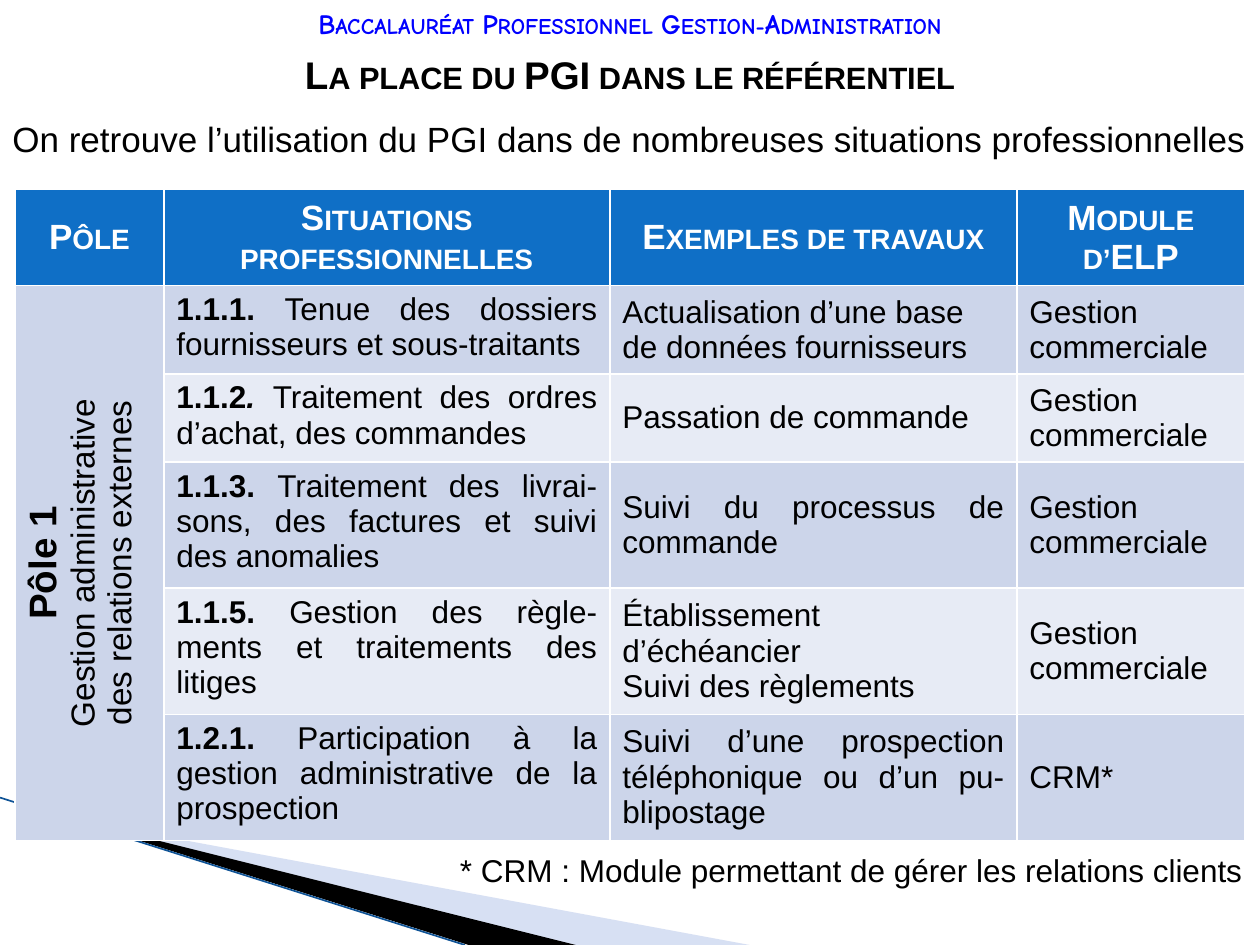
from lxml.etree import SubElement
from pptx import Presentation
from pptx.dml.color import RGBColor
from pptx.enum.shapes import MSO_CONNECTOR
from pptx.enum.text import MSO_ANCHOR, PP_ALIGN
from pptx.oxml.ns import qn
from pptx.util import Inches, Pt

LEFT, MID, RIGHT, JUST = PP_ALIGN.LEFT, PP_ALIGN.CENTER, PP_ALIGN.RIGHT, PP_ALIGN.JUSTIFY
WIDE, HIGH = 10, 7.5
BLUE, DARK, PALE = "0F6FC6", "CCD5EA", "E7EBF5"

BANDS = [
    ("9DB2E1", 40, [(0.55, 6.5), (5.95, 7.5), (4.56, 7.5)]),
    ("000000", 100, [(0.53, 6.49), (4.57, 7.5), (3.72, 7.5)]),
]
EDGE = (0, 6.33, 3.69, 7.5)

TEXTS = [
    ("Baccalauréat Professionnel Gestion-Administration",
     (0, 0, WIDE, 0.37), 16, "Comic Neue", "0000FF", True, MID, 1),
    ("La place du PGI dans le référentiel",
     (0, 0.36, WIDE, 0.47), 22, "Arial", "000000", True, MID, 1),
    ("On retrouve l’utilisation du PGI dans de nombreuses situations professionnelles",
     (0, 0.92, WIDE, 0.46), 20, "Arial", "000000", False, LEFT, 0.9),
    ("* CRM : Module permettant de gérer les relations clients",
     (1.1, 6.74, 8.86, 0.37), 18, "Arial", "000000", False, RIGHT, 0.9),
]

SPOT = (0.12, 1.5)
COLS = [1.18, 3.54, 3.23, 1.81]
ROWS = [0.76, 0.7, 0.7, 1, 1, 1]
HEADS = ["Pôle", "Situations professionnelles", "Exemples de travaux", "Module d’ELP"]
POLE = [("Pôle 1", 22, True), ("Gestion administrative", 19, False),
        ("des relations externes", 19, False)]
SALES = "Gestion commerciale"
TASKS = [
    ("1.1.1.", "Tenue des dossiers fournisseurs et sous-traitants",
     ["Actualisation d’une base de données fournisseurs"], LEFT, SALES),
    ("1.1.2.", "Traitement des ordres d’achat, des commandes",
     ["Passation de commande"], JUST, SALES),
    ("1.1.3.", "Traitement des livrai-sons, des factures et suivi des anomalies",
     ["Suivi du processus de commande"], JUST, SALES),
    ("1.1.5.", "Gestion des règle-ments et traitements des litiges",
     ["Établissement d’échéancier", "Suivi des règlements"], JUST, SALES),
    ("1.2.1.", "Participation à la gestion administrative de la prospection",
     ["Suivi d’une prospection téléphonique ou d’un pu-blipostage"], JUST, "CRM*"),
]


def paint(color, tint):
    color.rgb = RGBColor.from_string(tint)


def fill(item, tint):
    item.fill.solid()
    paint(item.fill.fore_color, tint)


def style(para, size, face="Arial", tint="000000", bold=False, align=LEFT, caps=False):
    para.alignment = align
    font = para.font
    font.size, font.name, font.bold = Pt(size), face, bold
    paint(font.color, tint)
    if caps:
        para._p.pPr.find(qn("a:defRPr")).set("cap", "small")


def lines(frame, count):
    for _ in range(count - 1):
        frame.add_paragraph()
    return frame.paragraphs


def put(para, text, bold=False, slant=False):
    run = para.add_run()
    run.text = text
    run.font.bold = bold
    if slant:
        run.font.italic = True


def draw_bands(slide):
    for tint, alpha, spots in BANDS:
        dots = [(round(x * 100), round(y * 100)) for x, y in spots]
        path = slide.shapes.build_freeform(*dots[0], scale=Inches(0.01))
        path.add_line_segments(dots[1:], close=True)
        band = path.convert_to_shape()
        band.shadow.inherit = False
        fill(band, tint)
        band.line.fill.background()
        if alpha < 100:
            color = band._element.spPr.find(".//" + qn("a:srgbClr"))
            SubElement(color, qn("a:alpha")).set("val", str(alpha * 1000))
    edge = slide.shapes.add_connector(MSO_CONNECTOR.STRAIGHT, *map(Inches, EDGE))
    edge.line.width = Pt(0.95)
    paint(edge.line.color, "0F5396")
    SubElement(edge._element.spPr, qn("a:effectLst"))


def draw_texts(slide):
    for text, area, size, face, tint, bold, align, gap in TEXTS:
        frame = slide.shapes.add_textbox(*map(Inches, area)).text_frame
        frame.word_wrap = True
        para = frame.paragraphs[0]
        para.text = text
        para.line_spacing = gap
        style(para, size, face, tint, bold, align, caps=bold)


def draw_table(slide):
    area = (*SPOT, sum(COLS), sum(ROWS))
    table = slide.shapes.add_table(len(ROWS), len(COLS), *map(Inches, area)).table
    for col, wide in zip(table.columns, COLS):
        col.width = Inches(wide)
    for row, high in zip(table.rows, ROWS):
        row.height = Inches(high)

    for col, text in enumerate(HEADS):
        cell = table.cell(0, col)
        fill(cell, BLUE)
        cell.vertical_anchor = MSO_ANCHOR.MIDDLE
        para = cell.text_frame.paragraphs[0]
        put(para, text, bold=True)
        style(para, 20, tint="FFFFFF", bold=True, align=MID, caps=True)

    pole = table.cell(1, 0)
    pole.merge(table.cell(len(TASKS), 0))
    fill(pole, DARK)
    pole._tc.get_or_add_tcPr().set("vert", "vert270")
    for para, (text, size, bold) in zip(lines(pole.text_frame, len(POLE)), POLE):
        put(para, text, bold)
        style(para, size, bold=bold, align=MID)

    for row, (code, task, works, align, module) in enumerate(TASKS, 1):
        cells = [table.cell(row, col) for col in (1, 2, 3)]
        for cell in cells:
            fill(cell, DARK if row % 2 else PALE)
        para = cells[0].text_frame.paragraphs[0]
        put(para, code[:-1], bold=True)
        put(para, ". ", bold=True, slant=code == "1.1.2.")
        put(para, task)
        style(para, 18, align=JUST)
        for cell, items, side in ((cells[1], works, align), (cells[2], [module], LEFT)):
            cell.vertical_anchor = MSO_ANCHOR.MIDDLE
            for para, text in zip(lines(cell.text_frame, len(items)), items):
                put(para, text)
                style(para, 18, align=side)


def main():
    deck = Presentation()
    deck.slide_width, deck.slide_height = Inches(WIDE), Inches(HIGH)
    slide = deck.slides.add_slide(deck.slide_layouts[6])
    draw_bands(slide)
    draw_texts(slide)
    draw_table(slide)
    deck.save("out.pptx")


if __name__ == "__main__":
    main()
